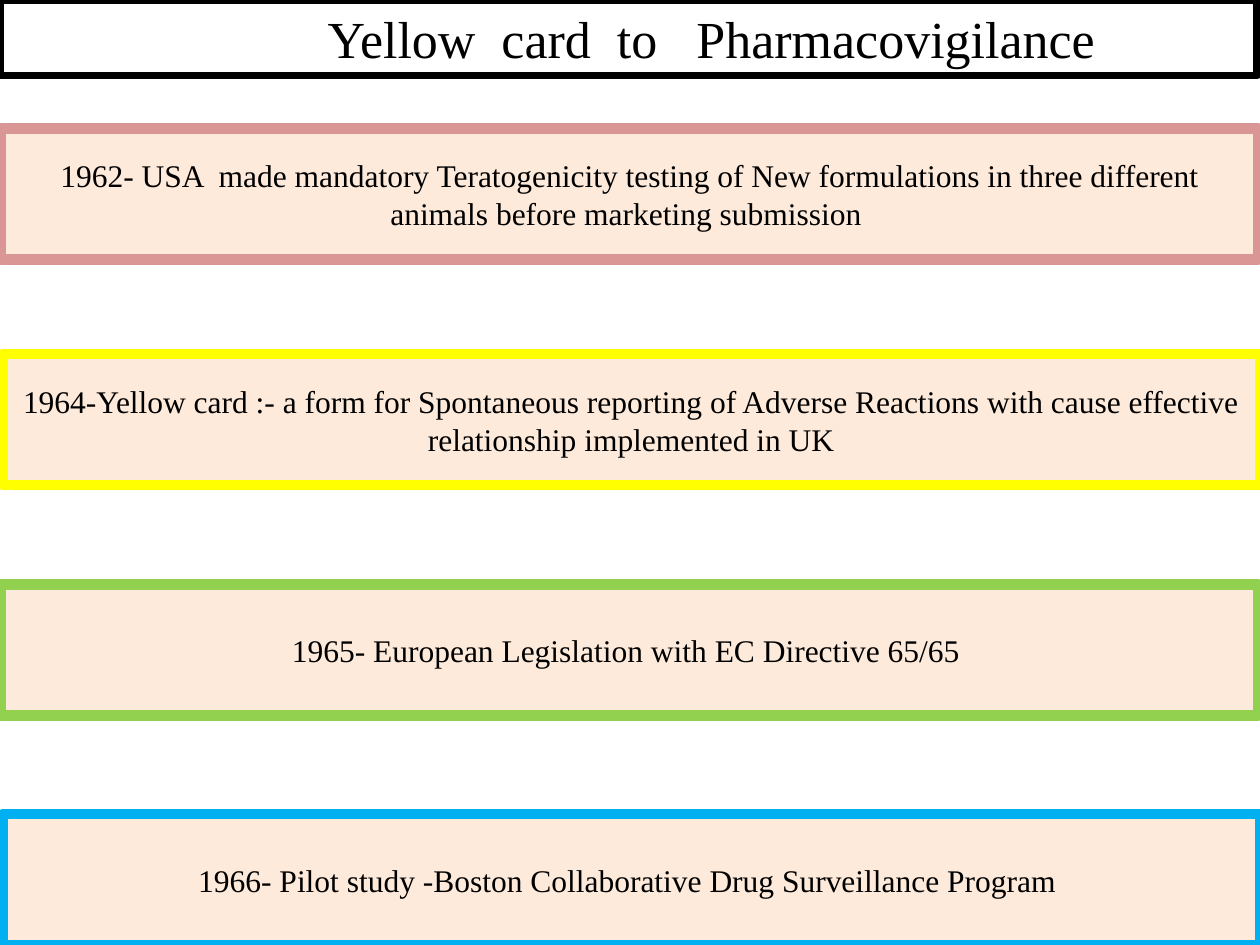
from pptx import Presentation
from pptx.dml.color import RGBColor
from pptx.enum.shapes import MSO_SHAPE
from pptx.enum.text import MSO_ANCHOR, MSO_AUTO_SIZE, PP_ALIGN
from pptx.util import Inches, Pt

COLORS = {"text": "000000", "panel": "FDEADA", "rose": "D99694",
          "yellow": "FFFF00", "green": "92D050", "blue": "00B0F0"}
WIDTH, HEIGHT = 9.98, 1.04
EVENTS = [
    (0.01, 1.02, "rose", "1962- USA  made mandatory Teratogenicity testing of New "
     "formulations in three different animals before marketing submission "),
    (0.02, 2.81, "yellow", "1964-Yellow card :- a form for Spontaneous reporting of "
     "Adverse Reactions with cause effective relationship implemented in UK"),
    (0.01, 4.64, "green", "1965- European Legislation with EC Directive 65/65 "),
    (0.02, 6.46, "blue", "1966- Pilot study -Boston Collaborative Drug Surveillance Program "),
]


def rgb(name):
    """Return the named colour."""
    return RGBColor.from_string(COLORS[name])


def set_text(shape, text, size):
    """Write centred black text into a shape."""
    tf = shape.text_frame
    frame_format = {"word_wrap": True, "auto_size": MSO_AUTO_SIZE.NONE,
                    "vertical_anchor": MSO_ANCHOR.MIDDLE}
    for name, value in frame_format.items():
        setattr(tf, name, value)
    p = tf.paragraphs[0]
    p.alignment = PP_ALIGN.CENTER
    r = p.add_run()
    r.text = text
    for name, value in {"name": "Times New Roman", "size": Pt(size)}.items():
        setattr(r.font, name, value)
    r.font.color.rgb = rgb("text")


def set_border(shape, color, width):
    """Outline a shape."""
    shape.line.color.rgb = rgb(color)
    shape.line.width = Pt(width)


def add_title(s, left, top, width, height):
    """Place the outlined slide title, its text set right of centre."""
    title = s.shapes.title
    box = {"left": left, "top": top, "width": width, "height": height}
    for name, value in box.items():
        setattr(title, name, Inches(value))
    set_border(title, "text", 4.5)
    set_text(title, "Yellow  card  to   Pharmacovigilance", 29.7)
    title.text_frame.margin_left = Inches(1.42)


def add_event(s, left, top, width, height, border, text):
    """Add one framed timeline event."""
    sp = s.shapes.add_shape(MSO_SHAPE.RECTANGLE, Inches(left), Inches(top),
                            Inches(width), Inches(height))
    sp.shadow.inherit = False
    sp.fill.solid()
    sp.fill.fore_color.rgb = rgb("panel")
    set_border(sp, border, 6)
    set_text(sp, text, 18)


def main():
    """Build and save the slide."""
    prs = Presentation()
    prs.slide_width, prs.slide_height = Inches(10), Inches(7.5)
    s = prs.slides.add_slide(prs.slide_layouts[5])
    add_title(s, 0, 0, WIDTH, 0.6)
    for left, top, border, text in EVENTS:
        add_event(s, left, top, WIDTH, HEIGHT, border, text)
    prs.save("out.pptx")


if __name__ == "__main__":
    main()
